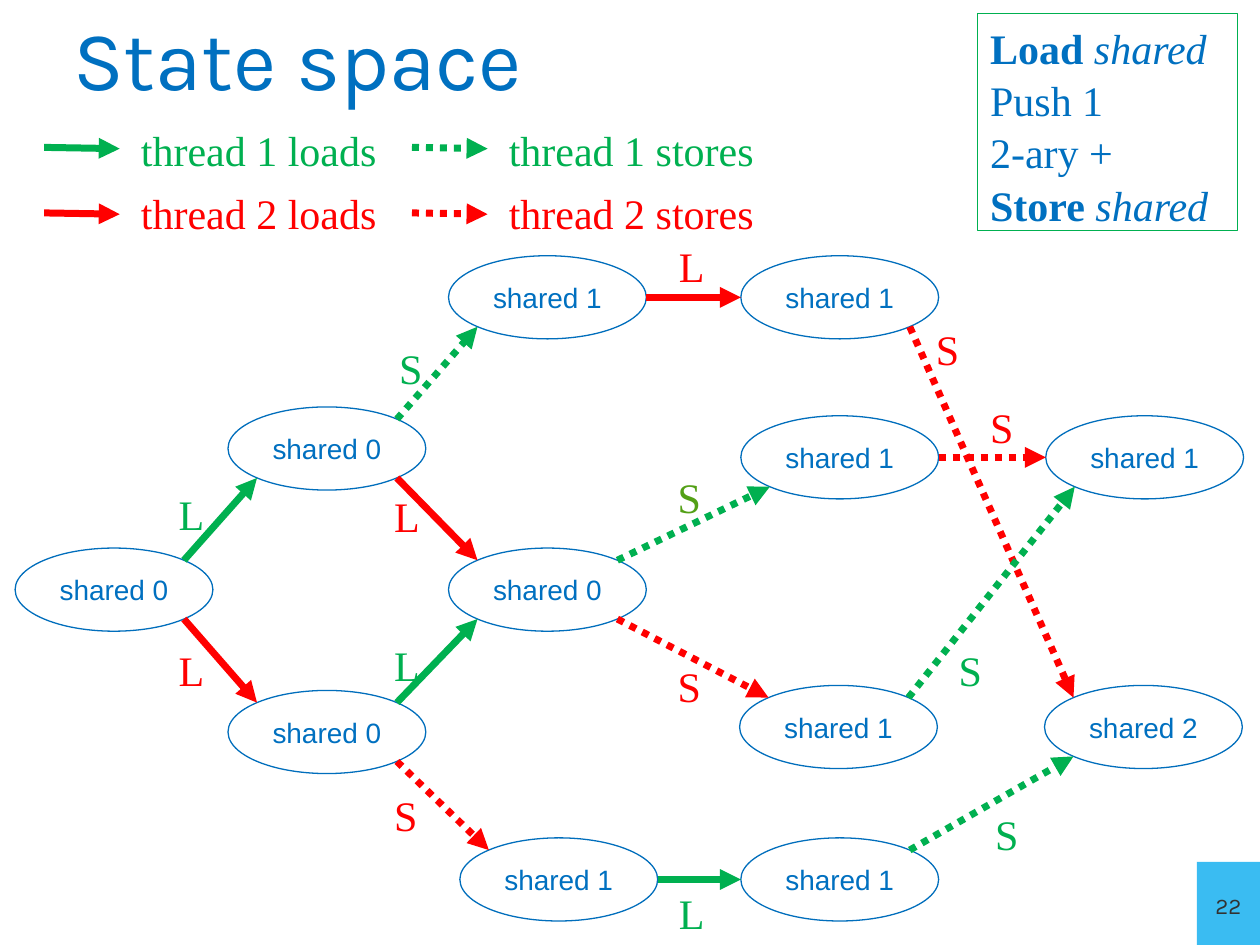
import math
from dataclasses import dataclass
from typing import Optional

import pptx
import pptx.dml.color
import pptx.enum.dml
import pptx.enum.shapes
import pptx.enum.text
import pptx.oxml
import pptx.oxml.ns
import pptx.util

RGB = pptx.dml.color.RGBColor
SHAPE = pptx.enum.shapes.MSO_SHAPE
ANCHOR = pptx.enum.text.MSO_ANCHOR
FIT = pptx.enum.text.MSO_AUTO_SIZE
CENTER = pptx.enum.text.PP_ALIGN.CENTER

GREEN = RGB(0x00, 0xB0, 0x50)
OLIVE = RGB(0x53, 0xA0, 0x16)
RED = RGB(0xFF, 0x00, 0x00)
BLUE = RGB(0x00, 0x70, 0xC0)
OUTLINE = RGB(0x00, 0x6E, 0xBC)
SKY = RGB(0x3A, 0xBC, 0xF2)
DARK = RGB(0x32, 0x32, 0x32)
WHITE = RGB(0xFF, 0xFF, 0xFF)
SERIF, SANS, HEAD = "Times New Roman", "Arial", "Karla"

prs = pptx.Presentation()
prs.slide_width, prs.slide_height = pptx.util.Inches(10), pptx.util.Inches(7.5)
slide = prs.slides.add_slide(prs.slide_layouts[5])

# Every length is in cells of a grid of 100 columns by 75 rows
CELL = prs.slide_width / 100
NODE_W, NODE_H = 15.7, 6.6
LABEL_W, LABEL_H = 4.2, 5


@dataclass(frozen=True)
class State:
    col: float
    row: float
    value: int

    def site(self, dx: int, dy: int) -> tuple[float, float]:
        """Point on the ellipse in direction (dx, dy)."""
        size = math.hypot(dx, dy)
        return (self.col + NODE_W / 2 * (1 + dx / size),
                self.row + NODE_H / 2 * (1 + dy / size))


@dataclass(frozen=True)
class Step:
    start: str
    end: str
    action: str
    color: RGB
    label: tuple[float, float]
    label_color: Optional[RGB] = None


def cells(*values: float) -> list[int]:
    return [round(v * CELL) for v in values]


def write(p, text: str, *, size: float, font: str, color: RGB, bold=False,
          italic=False, align=None, spacing=None):
    if align is not None:
        p.alignment = align
    if spacing is not None:
        p.line_spacing = spacing
    r = p.add_run()
    r.text = text
    r.font.size, r.font.name = pptx.util.Pt(size), font
    r.font.bold, r.font.italic = bold, italic
    r.font.color.rgb = color
    return r


def add_shape(kind, box: tuple, fill: Optional[RGB], line: Optional[RGB]):
    s = slide.shapes.add_shape(kind, *cells(*box))
    s.shadow.inherit = False
    if fill is None:
        s.fill.background()
    else:
        s.fill.solid()
        s.fill.fore_color.rgb = fill
    if line is None:
        s.line.fill.background()
    else:
        s.line.color.rgb, s.line.width = line, pptx.util.Pt(0.75)
    return s


def add_label(text: str, box: tuple, color: RGB, wrap: bool = True) -> None:
    tf = slide.shapes.add_textbox(*cells(*box)).text_frame
    tf.word_wrap, tf.auto_size = wrap, FIT.SHAPE_TO_FIT_TEXT
    write(tf.paragraphs[0], text, size=24, font=SERIF, color=color, spacing=1.04)


def add_arrow(start: tuple, end: tuple, color: RGB, dotted: bool) -> None:
    c = slide.shapes.add_connector(pptx.enum.shapes.MSO_CONNECTOR.STRAIGHT,
                                   *cells(*start, *end))
    c.line.color.rgb, c.line.width = color, pptx.util.Pt(4)
    if dotted:
        c.line.dash_style = pptx.enum.dml.MSO_LINE.ROUND_DOT
    ns = pptx.oxml.ns.nsdecls("a")
    c.line._get_or_add_ln().append(
        pptx.oxml.parse_xml(f'<a:tailEnd {ns} type="triangle"/>'))
    c._element.spPr.append(pptx.oxml.parse_xml(f"<a:effectLst {ns}/>"))


def add_state(state: State) -> None:
    s = add_shape(SHAPE.OVAL, (state.col, state.row, NODE_W, NODE_H), None, OUTLINE)
    tf = s.text_frame
    tf.vertical_anchor = ANCHOR.MIDDLE
    write(tf.paragraphs[0], f"shared {state.value}", size=16, font=SANS,
          color=BLUE, align=CENTER)


def add_step(step: Step) -> None:
    a, b = STATES[step.start], STATES[step.end]
    dy = (b.row > a.row) - (b.row < a.row)
    add_arrow(a.site(1, dy), b.site(-1, -dy), step.color, step.action == "S")
    add_label(step.action, (*step.label, LABEL_W, LABEL_H),
              step.label_color or step.color)


# States: column, row, value of the shared variable
STATES = {
    "start": State(1.2, 43.5, 0),
    "one loaded": State(18.1, 32.3, 0),
    "two loaded": State(18.1, 54.8, 0),
    "both loaded": State(35.6, 43.5, 0),
    "one stored": State(35.6, 20.3, 1),
    "two stored": State(36.5, 66.5, 1),
    "two reloaded": State(58.8, 20.3, 1),
    "one reloaded": State(58.8, 66.5, 1),
    "one overlaps": State(58.8, 33, 1),
    "two overlaps": State(58.7, 54.4, 1),
    "lost update": State(83, 33, 1),
    "correct": State(82.9, 54.4, 2),
}

# Steps between states: L loads, S stores; green is thread 1, red thread 2
STEPS = [
    Step("start", "one loaded", "L", GREEN, (13.2, 38.1)),
    Step("start", "two loaded", "L", RED, (13.2, 50.5)),
    Step("one loaded", "one stored", "S", GREEN, (30.7, 26.5)),
    Step("one loaded", "both loaded", "L", RED, (30.3, 38.3)),
    Step("two loaded", "both loaded", "L", GREEN, (30.3, 50.1)),
    Step("two loaded", "two stored", "S", RED, (30.3, 62)),
    Step("one stored", "two reloaded", "L", RED, (52.9, 18.4)),
    Step("two stored", "one reloaded", "L", GREEN, (52.9, 69.8)),
    Step("both loaded", "one overlaps", "S", GREEN, (52.8, 36.8), OLIVE),
    Step("both loaded", "two overlaps", "S", RED, (52.8, 51.8)),
    Step("two reloaded", "correct", "S", RED, (73.3, 25)),
    Step("one overlaps", "lost update", "S", RED, (77.6, 31.2)),
    Step("two overlaps", "lost update", "S", GREEN, (75.1, 50.5)),
    Step("one reloaded", "correct", "S", GREEN, (78, 63.5)),
]

# Title
title = slide.shapes.title
title.left, title.top, title.width, title.height = cells(4.8, -0.3, 51.8, 9.7)
tf = title.text_frame
tf.vertical_anchor, tf.auto_size = ANCHOR.MIDDLE, FIT.NONE
write(tf.paragraphs[0], "State space", size=48, font=HEAD, color=BLUE,
      align=pptx.enum.text.PP_ALIGN.LEFT)

# Page number
tf = add_shape(SHAPE.RECTANGLE, (95, 68.4, 5, 6.6), SKY, None).text_frame
tf.vertical_anchor, tf.word_wrap = ANCHOR.MIDDLE, False
r = write(tf.paragraphs[0], "22", size=16, font=HEAD, color=DARK, align=CENTER)
r.font._element.set("cap", "small")

# Program of each thread: operation and operand
PROGRAM = [("Load ", "shared"), ("Push 1", ""), ("2-ary +", ""), ("Store ", "shared")]
tf = add_shape(SHAPE.RECTANGLE, (77.6, 1.1, 20.6, 17.2), WHITE, GREEN).text_frame
tf.vertical_anchor, tf.auto_size = ANCHOR.TOP, FIT.SHAPE_TO_FIT_TEXT
for i, (operation, operand) in enumerate(PROGRAM):
    p = tf.paragraphs[0] if i == 0 else tf.add_paragraph()
    write(p, operation, size=24, font=SERIF, color=BLUE, bold=bool(operand),
          align=pptx.enum.text.PP_ALIGN.LEFT, spacing=1.04)
    if operand:
        write(p, operand, size=24, font=SERIF, color=BLUE, italic=True)

# State graph
for state in STATES.values():
    add_state(state)
for step in STEPS:
    add_step(step)

# Legend: a row per thread, a column per action
for i, (thread, color) in enumerate([(1, GREEN), (2, RED)]):
    for j, (action, width) in enumerate([("loads", 20.9), ("stores", 21.6)]):
        x, y = 3.5 + 29.2 * j, 11.7 + 5.2 * i
        add_arrow((x, y), (x + 6, y + 0.1), color, action == "stores")
        add_label(f"thread {thread} {action}",
                  (10.2 + 29.2 * j, 9.2 + 5 * i, width, LABEL_H), color, wrap=False)

prs.save("out.pptx")
